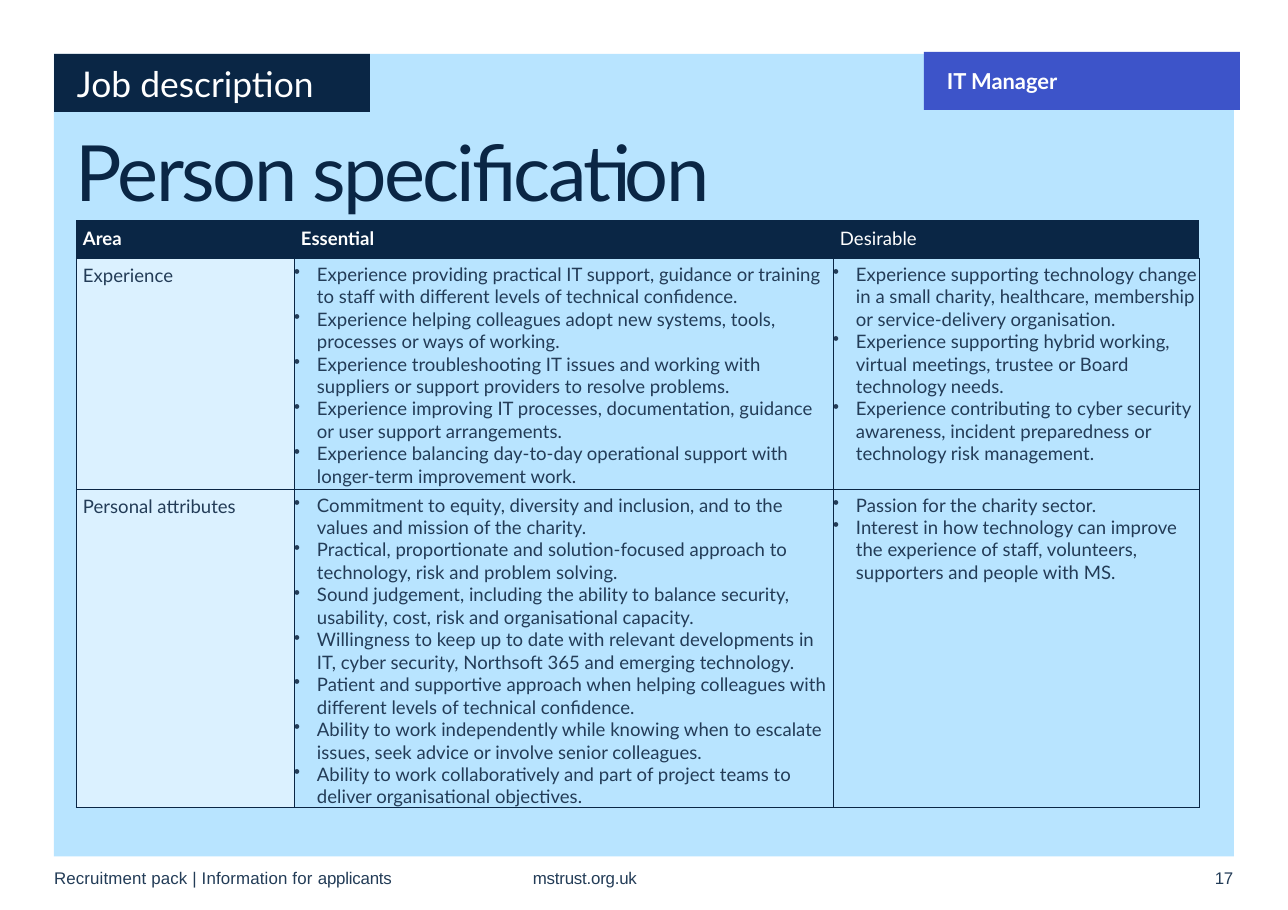
from lxml import etree
from pptx import Presentation
from pptx import util as u
from pptx.dml.color import RGBColor
from pptx.enum import shapes, text
from pptx.oxml.ns import qn

EMU_PER_PX = 7532
COLOURS = {"navy": "0A2645", "sky": "B8E4FF", "pale": "DBF1FF",
           "ink": "233C57", "indigo": "3D54C9", "white": "FFFFFF"}
PLAIN_TABLE = "{2D5ABB26-0587-4C30-8999-92F81FD0307C}"

TITLE = "Person specification"
PANEL = (54, 54, 1180, 803)
# wording, box, fill, size, bold
TAGS = [
    ("Job description", (54, 54, 316, 58), "navy", 21, False),
    ("IT Manager", (924, 52, 316, 58), "indigo", 13, True),
]
# box, runs of (wording, letter spacing)
FOOTER = [
    ((532, 868, 117, 25), [("mstrust.org.uk", -0.1)]),
    ((53, 868, 370, 25), [("Recruitment pack | Information for ", 0.1), ("applicants", -0.1)]),
    ((1214, 868, 25, 25), [("17", -0.2)]),
]
HEADINGS = [("Area", True), ("Essential", True), ("Desirable", False)]
CRITERIA = [
    ("Experience", [
        "Experience providing practical IT support, guidance or training to staff with different levels of technical confidence.",
        "Experience helping colleagues adopt new systems, tools, processes or ways of working.",
        "Experience troubleshooting IT issues and working with suppliers or support providers to resolve problems.",
        "Experience improving IT processes, documentation, guidance or user support arrangements.",
        "Experience balancing day-to-day operational support with longer-term improvement work.",
    ], [
        "Experience supporting technology change in a small charity, healthcare, membership or service-delivery organisation.",
        "Experience supporting hybrid working, virtual meetings, trustee or Board technology needs.",
        "Experience contributing to cyber security awareness, incident preparedness or technology risk management.",
    ]),
    ("Personal attributes", [
        "Commitment to equity, diversity and inclusion, and to the values and mission of the charity.",
        "Practical, proportionate and solution-focused approach to technology, risk and problem solving.",
        "Sound judgement, including the ability to balance security, usability, cost, risk and organisational capacity.",
        "Willingness to keep up to date with relevant developments in IT, cyber security, Northsoft 365 and emerging technology.",
        "Patient and supportive approach when helping colleagues with different levels of technical confidence.",
        "Ability to work independently while knowing when to escalate issues, seek advice or involve senior colleagues.",
        "Ability to work collaboratively and part of project teams to deliver organisational objectives.",
    ], [
        "Passion for the charity sector.",
        "Interest in how technology can improve the experience of staff, volunteers, supporters and people with MS.",
    ]),
]
TABLE_LEFT, TABLE_TOP = 76, 220
COLUMN_WIDTHS = [218, 539, 366]
ROW_HEIGHTS = [38, 231, 319]


def px(length):
    return u.Emu(length * EMU_PER_PX)


def place(box):
    return [px(length) for length in box]


def rgb(name):
    return RGBColor.from_string(COLOURS[name])


def add_run(paragraph, wording, size, colour, bold=False, font="Lato", spacing=0):
    run = paragraph.add_run()
    run.text = wording
    run.font.name, run.font.size, run.font.bold = font, u.Pt(size), bold
    run.font.color.rgb = rgb(colour)
    if spacing:
        run.font._element.set("spc", str(round(spacing * 100)))


def indent(paragraph, left, first=0, bullet=None):
    properties = paragraph._p.get_or_add_pPr()
    properties.set("marL", str(px(left)))
    properties.set("indent", str(px(first)))
    if bullet:
        etree.SubElement(properties, qn("a:buChar")).set("char", bullet)


def clear_margins(frame):
    frame.margin_left = frame.margin_top = frame.margin_right = frame.margin_bottom = 0
    frame.word_wrap = True


def add_block(slide, box, fill):
    block = slide.shapes.add_shape(shapes.MSO_SHAPE.RECTANGLE, *place(box))
    block.shadow.inherit = False
    block.fill.solid()
    block.fill.fore_color.rgb = rgb(fill)
    block.line.fill.background()
    return block


def add_tag(slide, wording, box, fill, size, bold):
    frame = add_block(slide, box, fill).text_frame
    clear_margins(frame)
    frame.vertical_anchor = text.MSO_ANCHOR.MIDDLE
    paragraph = frame.paragraphs[0]
    paragraph.alignment = text.PP_ALIGN.LEFT
    indent(paragraph, 23)
    add_run(paragraph, wording, size, "white", bold)


def set_title(slide):
    title = slide.shapes.title
    title.left, title.top, title.width, title.height = place((76, 135, 1138, 85))
    frame = title.text_frame
    clear_margins(frame)
    frame.auto_size = text.MSO_AUTO_SIZE.NONE
    frame.vertical_anchor = text.MSO_ANCHOR.TOP
    paragraph = frame.paragraphs[0]
    paragraph.alignment = text.PP_ALIGN.LEFT
    paragraph.line_spacing = 0.9
    add_run(paragraph, TITLE, 46, "navy", spacing=-1.5)
    slide.shapes._spTree.append(title._element)  # in front of the panel


def style_cell(cell, fill, top, bordered=True):
    cell.margin_left = cell.margin_right = cell.margin_bottom = 0
    cell.margin_top = px(top)
    if bordered:
        properties = cell._tc.get_or_add_tcPr()
        for side in ("lnL", "lnR", "lnT", "lnB"):
            line = etree.SubElement(properties, qn(f"a:{side}"), w=str(u.Pt(0.25)))
            solid = etree.SubElement(line, qn("a:solidFill"))
            etree.SubElement(solid, qn("a:srgbClr"), val=COLOURS["navy"])
    cell.fill.solid()
    cell.fill.fore_color.rgb = rgb(fill)


def fill_bullets(frame, points):
    for i, point in enumerate(points):
        paragraph = frame.add_paragraph() if i else frame.paragraphs[0]
        indent(paragraph, 23, -23, "•")
        add_run(paragraph, point, 11, "ink")


def add_criteria(slide):
    box = (TABLE_LEFT, TABLE_TOP, sum(COLUMN_WIDTHS), sum(ROW_HEIGHTS))
    table = slide.shapes.add_table(len(ROW_HEIGHTS), len(COLUMN_WIDTHS), *place(box)).table
    table.horz_banding = False
    table._tbl.tblPr.find(qn("a:tableStyleId")).text = PLAIN_TABLE
    for column, width in zip(table.columns, COLUMN_WIDTHS):
        column.width = px(width)
    for row, height in zip(table.rows, ROW_HEIGHTS):
        row.height = px(height)

    for column, (heading, bold) in enumerate(HEADINGS):
        cell = table.cell(0, column)
        style_cell(cell, "navy", 7, bordered=False)
        paragraph = cell.text_frame.paragraphs[0]
        indent(paragraph, 7)
        add_run(paragraph, heading, 11, "white", bold)

    for row, (area, *columns) in enumerate(CRITERIA, 1):
        cell = table.cell(row, 0)
        style_cell(cell, "pale", 5)
        paragraph = cell.text_frame.paragraphs[0]
        indent(paragraph, 7)
        paragraph.line_spacing = 1.06
        add_run(paragraph, area, 11, "ink")
        for column, points in enumerate(columns, 1):
            cell = table.cell(row, column)
            style_cell(cell, "sky", 5)
            fill_bullets(cell.text_frame, points)


def main():
    deck = Presentation()
    deck.slide_width, deck.slide_height = u.Inches(10.61), u.Inches(7.5)
    slide = deck.slides.add_slide(deck.slide_layouts[5])
    add_block(slide, PANEL, "sky")
    set_title(slide)
    for tag in TAGS:
        add_tag(slide, *tag)
    for box, runs in FOOTER:
        frame = slide.shapes.add_textbox(*place(box)).text_frame
        clear_margins(frame)
        indent(frame.paragraphs[0], 1)
        for wording, spacing in runs:
            add_run(frame.paragraphs[0], wording, 10, "ink", font="Arial", spacing=spacing)
    add_criteria(slide)
    deck.save("out.pptx")


if __name__ == "__main__":
    main()
